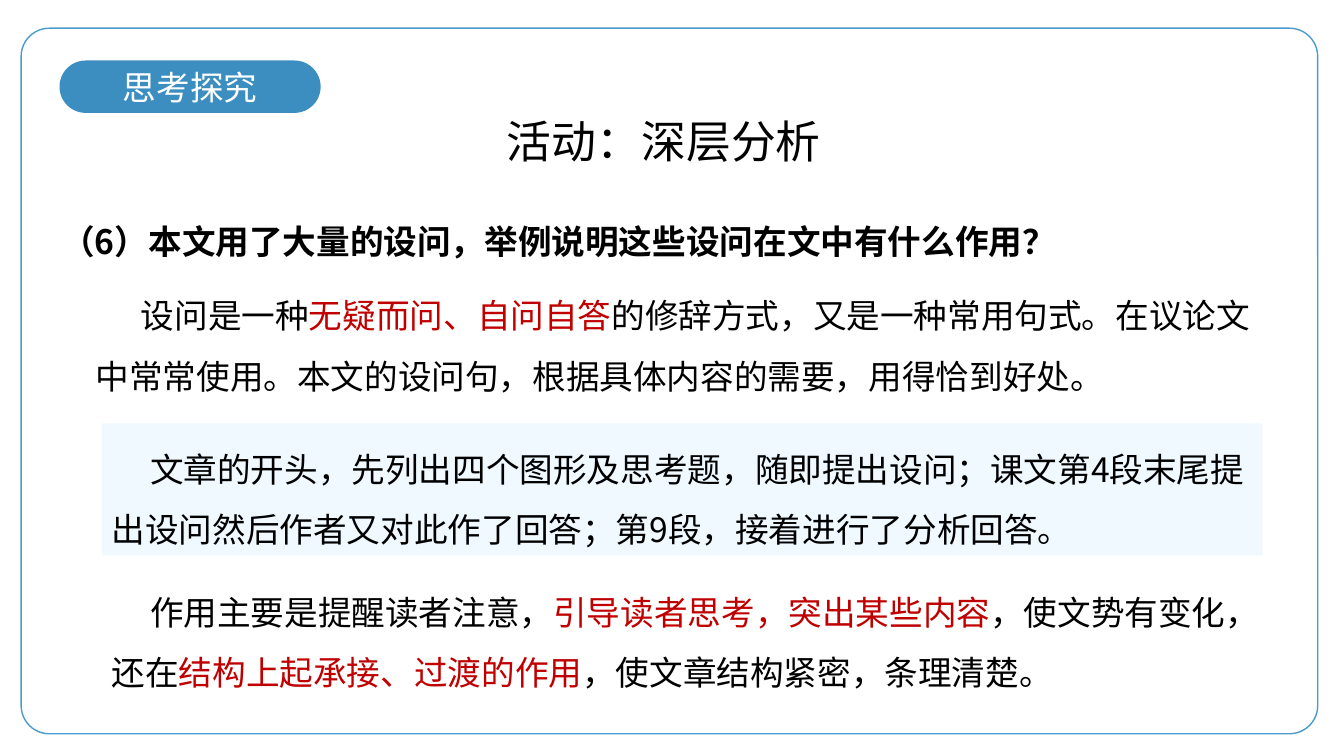
from lxml import etree
from pptx import Presentation
from pptx.dml.color import RGBColor
from pptx.enum.shapes import MSO_SHAPE
from pptx.enum.text import MSO_ANCHOR, MSO_AUTO_SIZE, PP_ALIGN
from pptx.oxml.ns import qn
from pptx.util import Inches, Pt

RECT, ROUND = MSO_SHAPE.RECTANGLE, MSO_SHAPE.ROUNDED_RECTANGLE
TOP, MIDDLE = MSO_ANCHOR.TOP, MSO_ANCHOR.MIDDLE
LEFT, CENTER = PP_ALIGN.LEFT, PP_ALIGN.CENTER
GROW = MSO_AUTO_SIZE.SHAPE_TO_FIT_TEXT

THEME = {
    "blue": "3C8EC0", "edge": "4B9BCC", "pale": "EFF9FF",
    "white": "FFFFFF", "ink": "000000", "red": "C00000",
    "font": "Noto Sans CJK SC", "tag_font": "Calibri",
    "body": 24, "title": 32, "spacing": 1.5,
}

# Each text is a list of (words, colour) pieces.
TAG = [("思考探究", "white")]
TITLE = [("活动：深层分析", "ink")]
QUESTION = [("（6）本文用了大量的设问，举例说明这些设问在文中有什么作用？", "ink")]

# Box, fill, first-line indent, pieces
ANSWERS = [
    ((0.85, 2.68, 11.83, 1.31), None, 0.45, [
        ("设问是一种", "ink"),
        ("无疑而问、自问自答", "red"),
        ("的修辞方式，又是一种常用句式。在议论文中常常使用。"
         "本文的设问句，根据具体内容的需要，用得恰到好处。", "ink"),
    ]),
    ((1.01, 4.2, 11.51, 1.31), "pale", 0.38, [
        ("文章的开头，先列出四个图形及思考题，随即提出设问；课文第4段末尾"
         "提出设问然后作者又对此作了回答；第9段，接着进行了分析回答。", "ink"),
    ]),
    ((1.01, 5.62, 11.68, 1.31), None, 0.38, [
        ("作用主要是提醒读者注意，", "ink"),
        ("引导读者思考，突出某些内容", "red"),
        ("，使文势有变化，还在", "ink"),
        ("结构上起承接、过渡的作用", "red"),
        ("，使文章结构紧密，条理清楚。", "ink"),
    ]),
]


def color(name):
    return RGBColor.from_string(THEME[name])


def add_panel(slide, kind, box, fill=None, line=None, round_by=None):
    panel = slide.shapes.add_shape(kind, *map(Inches, box))
    panel.shadow.inherit = False
    if round_by is not None:
        panel.adjustments[0] = round_by
    if fill:
        panel.fill.solid()
        panel.fill.fore_color.rgb = color(fill)
    else:
        panel.fill.background()
    if line:
        panel.line.color.rgb = color(line)
        panel.line.width = Pt(1)
    else:
        panel.line.fill.background()
    return panel


def write(shape, pieces, size="body", font="font", bold=False,
          align=LEFT, anchor=TOP, indent=0, spacing=None):
    frame = shape.text_frame
    frame.word_wrap = True
    frame.vertical_anchor = anchor
    par = frame.paragraphs[0]
    par.alignment = align
    if spacing:
        par.line_spacing = spacing
    if indent:
        props = par._p.get_or_add_pPr()
        props.set("marL", "0")
        props.set("indent", str(Inches(indent)))
    for words, tone in pieces:
        run = par.add_run()
        run.text = words
        run.font.size = Pt(THEME[size])
        run.font.bold = bold
        run.font.color.rgb = color(tone)
        run.font.name = THEME[font]
        east = etree.SubElement(run._r.get_or_add_rPr(), qn("a:ea"))
        east.set("typeface", THEME["font"])


def add_text(slide, box):
    return slide.shapes.add_textbox(*map(Inches, box))


def main():
    deck = Presentation()
    deck.slide_width, deck.slide_height = Inches(13.33), Inches(7.5)
    slide = deck.slides.add_slide(deck.slide_layouts[6])

    tag = add_panel(slide, ROUND, (0.59, 0.6, 2.59, 0.52), "blue", round_by=0.5)
    write(tag, TAG, font="tag_font", align=CENTER, anchor=MIDDLE)
    add_panel(slide, ROUND, (0.21, 0.28, 12.86, 7), line="edge", round_by=0.04)

    title = add_text(slide, (4.53, 1.12, 4.11, 0.54))
    write(title, TITLE, size="title", align=CENTER, anchor=MIDDLE)
    question = add_text(slide, (0.29, 1.94, 12.38, 0.65))
    write(question, QUESTION, bold=True, indent=0.22, spacing=THEME["spacing"])

    for box, fill, indent, pieces in ANSWERS:
        if fill:
            answer = add_panel(slide, RECT, box, fill)
        else:
            answer = add_text(slide, box)
        write(answer, pieces, indent=indent, spacing=THEME["spacing"])
        answer.text_frame.auto_size = GROW

    deck.save("out.pptx")


if __name__ == "__main__":
    main()
